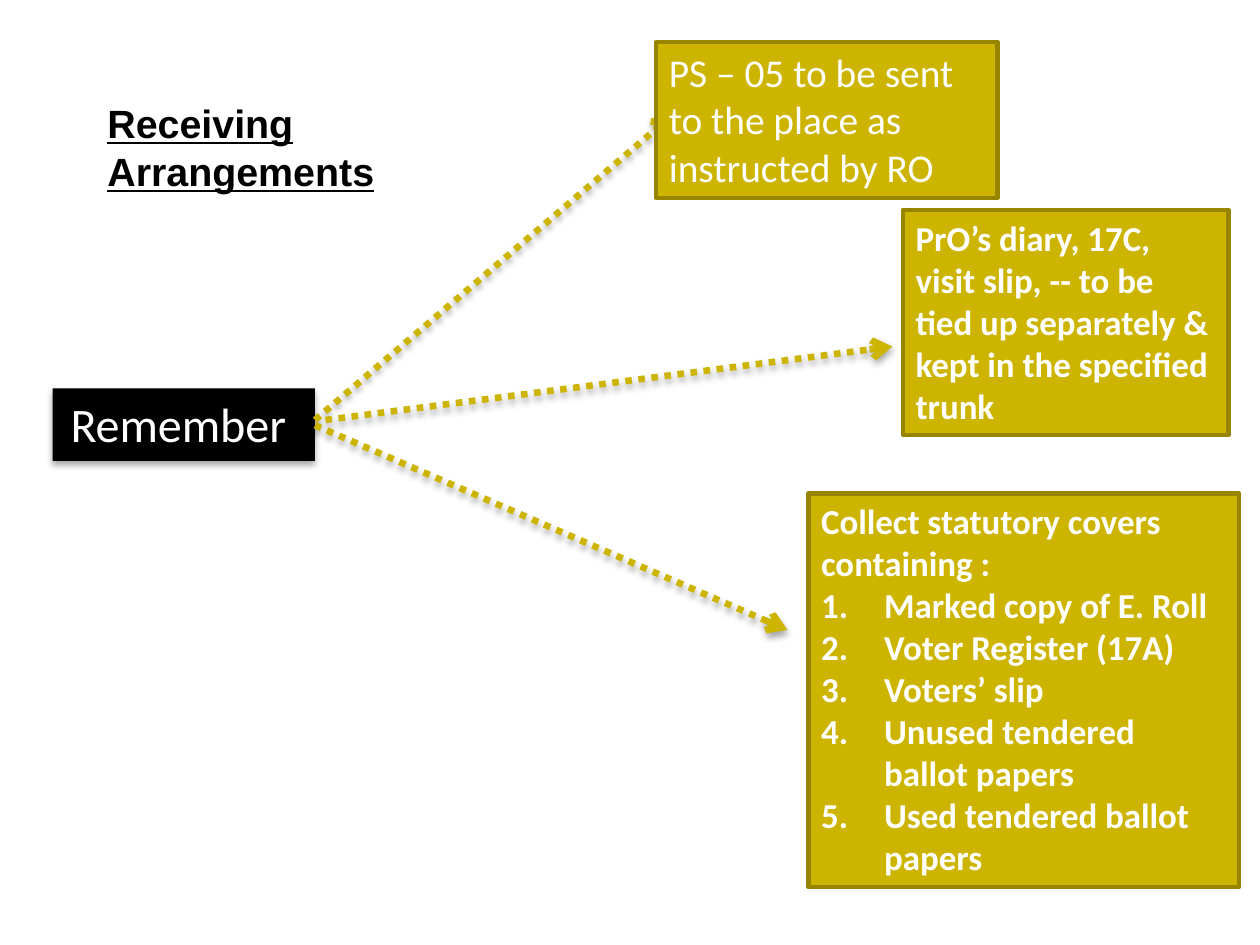
"""Build the slide on receiving arrangements, on a grid of 120 columns by 90 rows."""
from pptx import Presentation, util as u
from pptx.dml.color import RGBColor
from pptx.enum import dml, shapes as sh, text as tx
from pptx.oxml import parse_xml
from pptx.oxml.ns import nsdecls

deck = Presentation()
deck.slide_width, deck.slide_height = u.Inches(8), u.Inches(6)
slide = deck.slides.add_slide(deck.slide_layouts[6])
unit = deck.slide_width / 120
hue = RGBColor.from_string
gold, edge, black, white = "CCB400", "978500", "000000", "FFFFFF"
names = nsdecls("a")


def cast(item):
    """Give a shape or line its soft shadow."""
    item._element.spPr.append(parse_xml(
        f'<a:effectLst {names}><a:outerShdw blurRad="39400" dist="22900" dir="5400000" rotWithShape="0">'
        '<a:srgbClr val="000000"><a:alpha val="35000"/></a:srgbClr></a:outerShdw></a:effectLst>'))


def write(item, lines, ink, form, align=tx.PP_ALIGN.LEFT):
    """Fill a shape with paragraphs, numbering all after the first."""
    frame = item.text_frame
    frame.word_wrap = True
    frame.auto_size = tx.MSO_AUTO_SIZE.SHAPE_TO_FIT_TEXT
    frame.vertical_anchor = tx.MSO_ANCHOR.TOP
    for i, line in enumerate(lines):
        para = frame.add_paragraph() if i else frame.paragraphs[0]
        para.alignment = align
        run = para.add_run()
        run.text = line
        run.font.color.rgb = hue(ink)
        for key, val in form.items():
            setattr(run.font, key, val)
        if i:
            props = para._p.get_or_add_pPr()
            props.set("marL", str(u.Inches(0.4)))
            props.set("indent", str(-u.Inches(0.4)))
            props.append(parse_xml(f'<a:buFont {names} typeface="+mj-lt"/>'))
            props.append(parse_xml(f'<a:buAutoNum {names} type="arabicPeriod"/>'))


plain = dict(name="Calibri", size=u.Pt(18), bold=False)
strong = dict(name="Calibri", size=u.Pt(16), bold=True)
boxes = [
    ((5, 37, 25, 6.9), ["Remember "], dict(plain, size=u.Pt(22))),
    ((62.5, 4, 32.5, 14.85), ["PS – 05 to be sent to the place as instructed by RO"], plain),
    ((86, 20, 31, 21.45),
     ["PrO’s diary, 17C, visit slip, -- to be tied up separately & kept in the specified trunk"], strong),
    ((77, 47, 41, 37.5),
     ["Collect statutory covers containing :", "Marked copy of E. Roll", "Voter Register (17A)",
      "Voters’ slip", "Unused tendered ballot papers", "Used tendered ballot papers"], strong),
]
arrows = [(30, 40, 64, 11), (31, 40, 85, 33), (30, 40.5, 75, 60)]

for i, (place, lines, form) in enumerate(boxes):
    box = slide.shapes.add_shape(sh.MSO_SHAPE.RECTANGLE, *[int(n * unit) for n in place])
    box.fill.solid()
    box.fill.fore_color.rgb = hue(gold if i else black)
    for side, gap in dict(left=0.08, right=0.08, top=0.04, bottom=0.04).items():
        setattr(box.text_frame, f"margin_{side}", u.Inches(gap))
    if i:
        box.shadow.inherit = False
        box.line.color.rgb = hue(edge)
        box.line.width = u.Pt(2)
        write(box, lines, white, form)
        continue
    box.line.fill.background()
    cast(box)
    write(box, lines, white, form, tx.PP_ALIGN.CENTER)
    for ends in arrows:
        arrow = slide.shapes.add_connector(sh.MSO_CONNECTOR.STRAIGHT, *[int(n * unit) for n in ends])
        arrow.line.color.rgb = hue(gold)
        arrow.line.width = u.Pt(3)
        arrow.line.dash_style = dml.MSO_LINE.ROUND_DOT
        arrow.line._get_or_add_ln().append(parse_xml(f'<a:tailEnd {names} type="arrow"/>'))
        cast(arrow)

title = slide.shapes.add_textbox(*[int(n * unit) for n in (8.75, 8.75, 41.25, 6)])
write(title, ["Receiving Arrangements"], black,
      dict(name="Arial", size=u.Pt(18), bold=True, underline=True))

deck.save("out.pptx")
